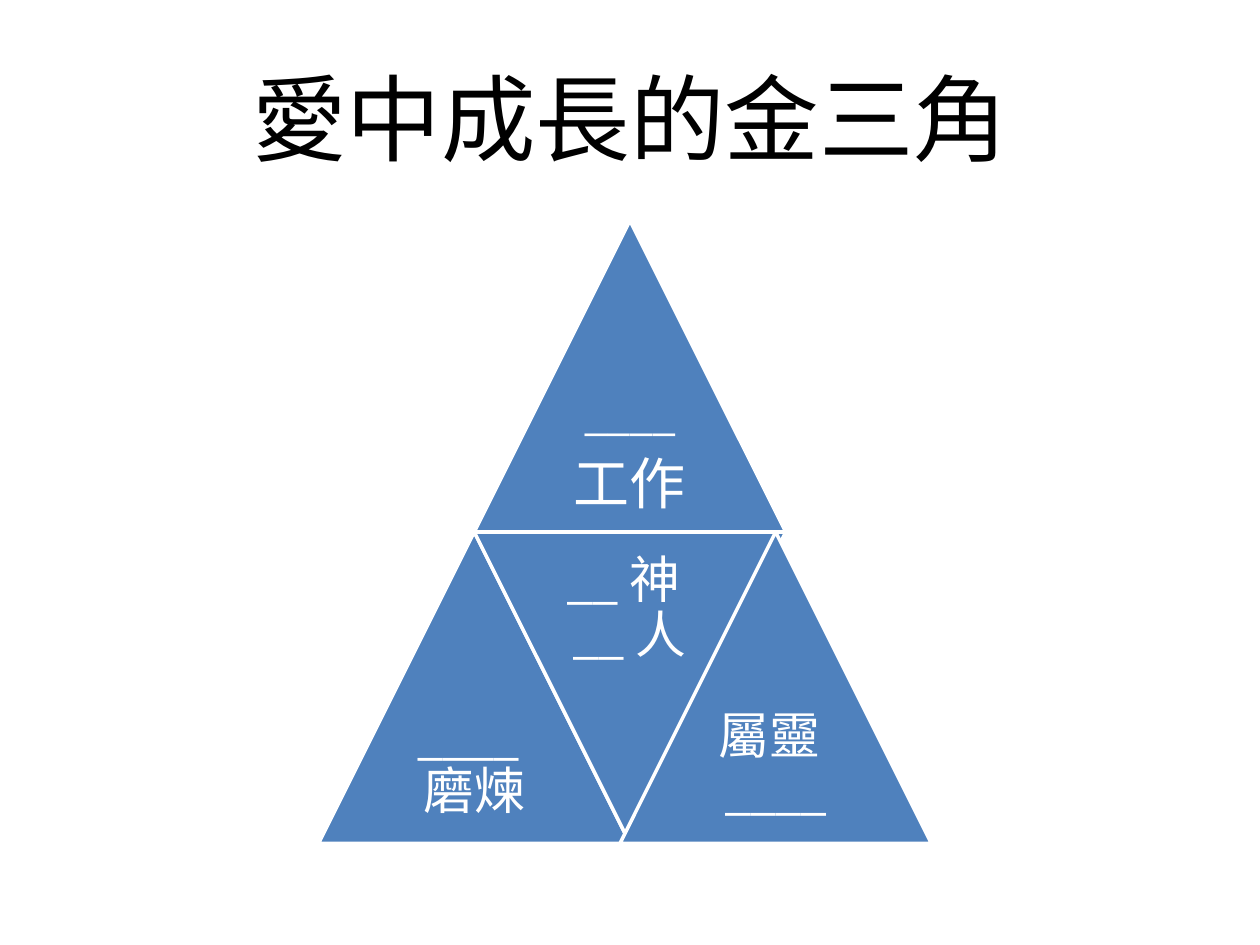
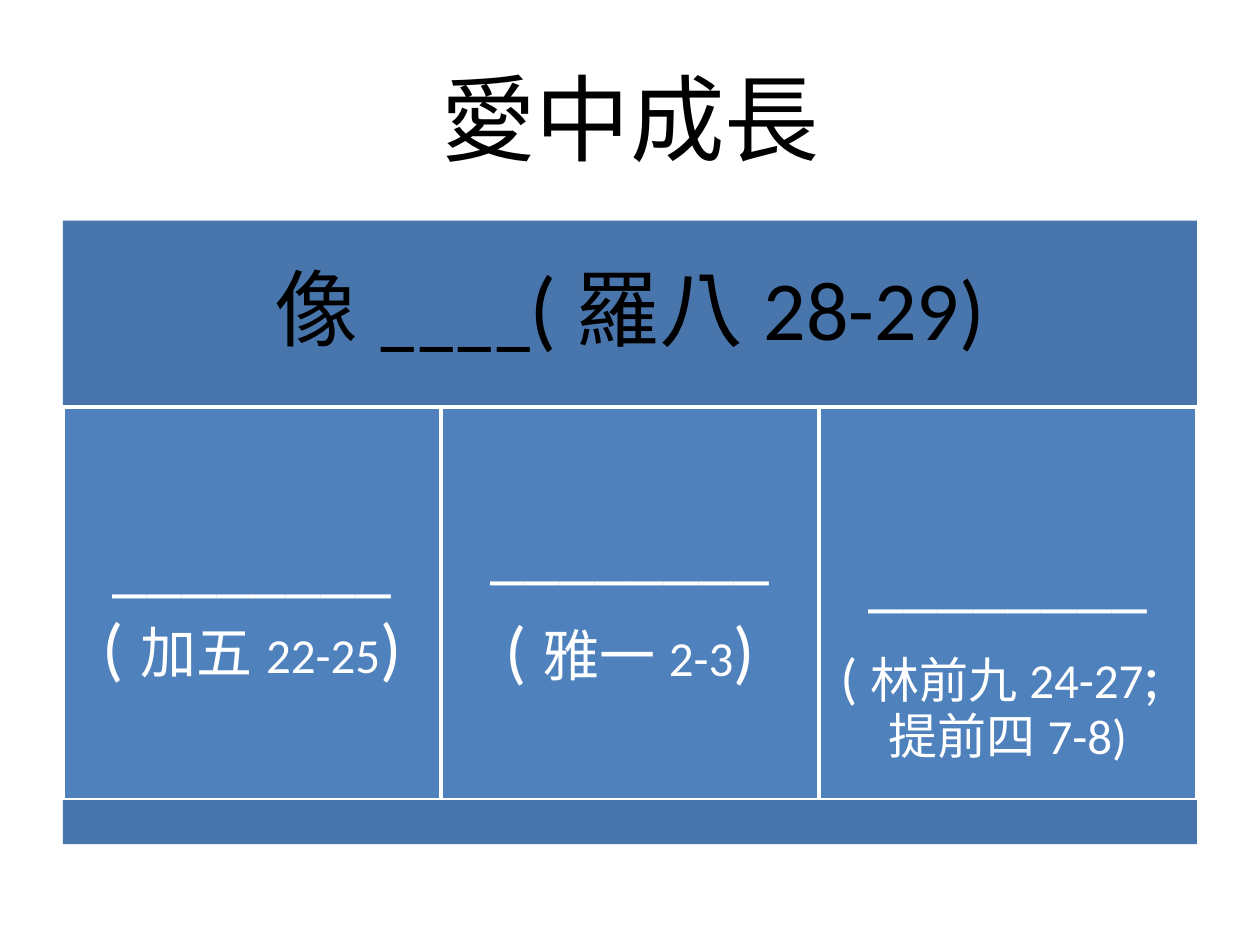
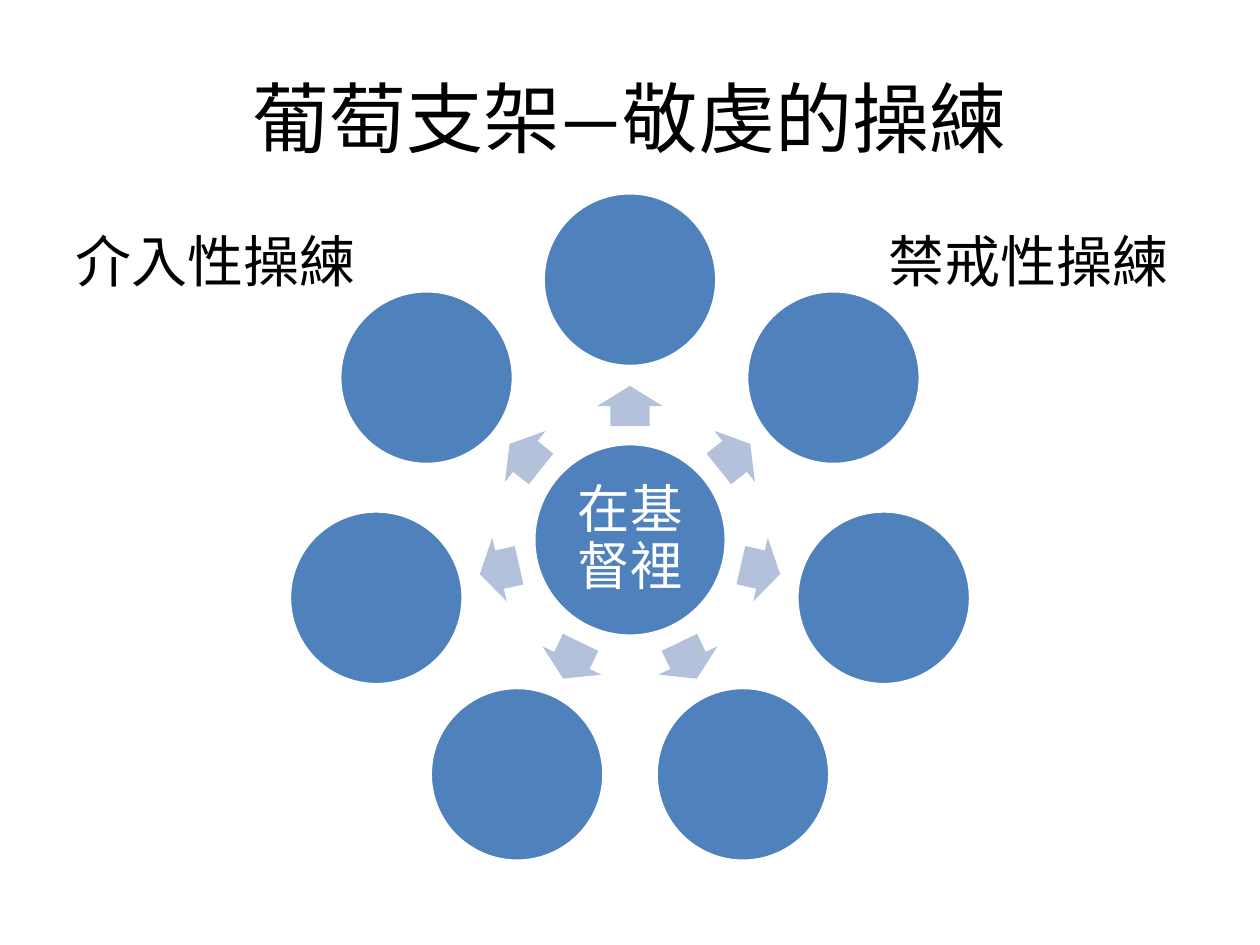
import math
from dataclasses import dataclass

import pptx
import pptx.dml.color
import pptx.enum.shapes
import pptx.enum.text
import pptx.oxml.ns
import pptx.util
from lxml import etree

Pt = pptx.util.Pt
Shape = pptx.enum.shapes.MSO_SHAPE


@dataclass(frozen=True)
class Theme:
    blue: str = "4F81BD"
    band: str = "4875AC"
    arrow: str = "B3C1DB"
    white: str = "FFFFFF"
    black: str = "000000"
    latin: str = "Calibri"
    chinese: str = "Lato"
    outline: float = 2
    title: int = 54
    long_title: int = 44
    header: int = 48
    blank: int = 40
    semicolon: int = 36
    label: int = 32
    hub: int = 30
    triangle: int = 29
    verse: int = 28
    short_blank: int = 26


THEME = Theme()


def rgb(value):
    return pptx.dml.color.RGBColor.from_string(value)


def add_span(para, text, size, color):
    span = para.add_run()
    span.text = text
    is_chinese = any(letter >= "一" for letter in text)
    span.font.name = THEME.chinese if is_chinese else THEME.latin
    span.font.size = Pt(size)
    span.font.color.rgb = rgb(color)
    if is_chinese:
        properties = span._r.get_or_add_rPr()
        properties.set("lang", "zh-TW")
        east_asian = etree.SubElement(properties, pptx.oxml.ns.qn("a:ea"))
        east_asian.set("typeface", THEME.chinese)


def write(box, paragraphs, color=THEME.white, inset=8.64, top_inset=None, spacing=0.9, after=0.35):
    frame = box.text_frame
    frame.word_wrap = True
    frame.vertical_anchor = pptx.enum.text.MSO_ANCHOR.MIDDLE
    frame.margin_left = frame.margin_right = frame.margin_bottom = Pt(inset)
    frame.margin_top = Pt(inset if top_inset is None else top_inset)
    for index, spans in enumerate(paragraphs):
        para = frame.add_paragraph() if index else frame.paragraphs[0]
        para.alignment = pptx.enum.text.PP_ALIGN.CENTER
        para.line_spacing = spacing
        para.space_after = Pt(after * max(size for _, size in spans))
        for text, size in spans:
            add_span(para, text, size, color)


def add_page(deck, title, size=THEME.title):
    page = deck.slides.add_slide(deck.slide_layouts[5])
    box = page.shapes.title
    box.left, box.top, box.width, box.height = Pt(36), Pt(21.6), Pt(648), Pt(90)
    box.text_frame.vertical_anchor = pptx.enum.text.MSO_ANCHOR.MIDDLE
    para = box.text_frame.paragraphs[0]
    para.alignment = pptx.enum.text.PP_ALIGN.CENTER
    add_span(para, title, size, THEME.black)
    return page


def add_figure(page, kind, left, top, width, height, fill=THEME.blue, outlined=True, rotation=0):
    figure = page.shapes.add_shape(kind, Pt(left), Pt(top), Pt(width), Pt(height))
    figure.shadow.inherit = False
    figure.rotation = rotation
    figure.fill.solid()
    figure.fill.fore_color.rgb = rgb(fill)
    if outlined:
        figure.line.color.rgb = rgb(THEME.white)
        figure.line.width = Pt(THEME.outline)
    else:
        figure.line.fill.background()
    return figure


def add_centered(page, kind, center, width, height, **style):
    x, y = center
    return add_figure(page, kind, x - width / 2, y - height / 2, width, height, **style)


def add_label(page, left, top, text):
    box = page.shapes.add_textbox(Pt(left), Pt(top), Pt(180), Pt(48))
    box.text_frame.word_wrap = True
    add_span(box.text_frame.paragraphs[0], text, THEME.label, THEME.black)


def build_triangle_page(deck):
    page = add_page(deck, "愛中成長的金三角")
    side, left, top = 178, 271, 126
    middle = top + side
    size = THEME.triangle

    work = add_figure(page, Shape.ISOSCELES_TRIANGLE, left, top, side, side)
    write(work, [[("____", THEME.short_blank)], [("工作", THEME.label)]], inset=8)

    trial = add_figure(page, Shape.ISOSCELES_TRIANGLE, left - side / 2, middle, side, side)
    write(trial, [[("____", size), ("磨煉", size)]])

    add_figure(page, Shape.ISOSCELES_TRIANGLE, left, middle, side, side, rotation=180)
    center = page.shapes.add_textbox(Pt(left + side / 4), Pt(middle), Pt(side / 2), Pt(side / 2))
    write(center, [[("__", size), ("神", size), ("__", size), ("人", size)]])

    spirit = add_figure(page, Shape.ISOSCELES_TRIANGLE, 354.24, middle, side, side)
    write(spirit, [[("屬靈", size), ("____", size)]])


def build_growth_page(deck):
    page = add_page(deck, "愛中成長")
    left, top, width = 36, 126, 648
    header_height, column_height, footer_height = 106.56, 224.64, 25.2
    columns_top = top + header_height
    header = add_figure(page, Shape.RECTANGLE, left, top, width, header_height, THEME.band, False)
    write(header, [[("像____(羅八", THEME.header), ("28-29)", THEME.header)]],
          color=THEME.black, inset=14.4)

    blank = [("________", THEME.blank)]
    columns = [
        ([("(", THEME.blank), ("加五", THEME.label), ("22-25", THEME.verse), (")", THEME.blank)],
         {"spacing": 1.0, "after": 0}),
        ([("(", THEME.blank), ("雅一", THEME.label), ("2-3", THEME.verse), (")", THEME.blank)], {}),
        ([("(", THEME.label), ("林前九", THEME.verse), ("24-27", THEME.verse),
          (";", THEME.semicolon), ("提前四", THEME.verse), ("7-8)", THEME.verse)],
         {"top_inset": 70}),
    ]
    column_width = width / len(columns)
    for index, (verse, style) in enumerate(columns):
        column = add_figure(page, Shape.RECTANGLE, left + index * column_width, columns_top,
                            column_width, column_height)
        write(column, [blank, verse], inset=12.24, **style)

    add_figure(page, Shape.RECTANGLE, left, columns_top + column_height, width, footer_height,
               THEME.band, False)


def build_discipline_page(deck):
    page = add_page(deck, "葡萄支架—敬虔的操練", THEME.long_title)
    add_label(page, 36, 126, "介入性操練")
    add_label(page, 500.4, 126, "禁戒性操練")

    hub_x, hub_y = 360, 308.5
    hub = add_centered(page, Shape.OVAL, (hub_x, hub_y), 110, 110)
    write(hub, [[("在基督裡", THEME.hub)]], inset=3)

    count = 7
    for index in range(count):
        turn = 360 / count * index
        angle = math.radians(turn)

        def around(radius):
            return hub_x + radius * math.sin(angle), hub_y - radius * math.cos(angle)

        arrow = add_centered(page, Shape.RIGHT_ARROW, around(76.5), 23, 37.4,
                             fill=THEME.arrow, outlined=False, rotation=(turn - 90) % 360)
        arrow.adjustments[0] = 0.6
        arrow.adjustments[1] = 0.5
        add_centered(page, Shape.OVAL, around(148.7), 99.3, 99.3)


def main():
    deck = pptx.Presentation()
    deck.slide_width, deck.slide_height = Pt(720), Pt(540)
    build_triangle_page(deck)
    build_growth_page(deck)
    build_discipline_page(deck)
    deck.save("out.pptx")


if __name__ == "__main__":
    main()
